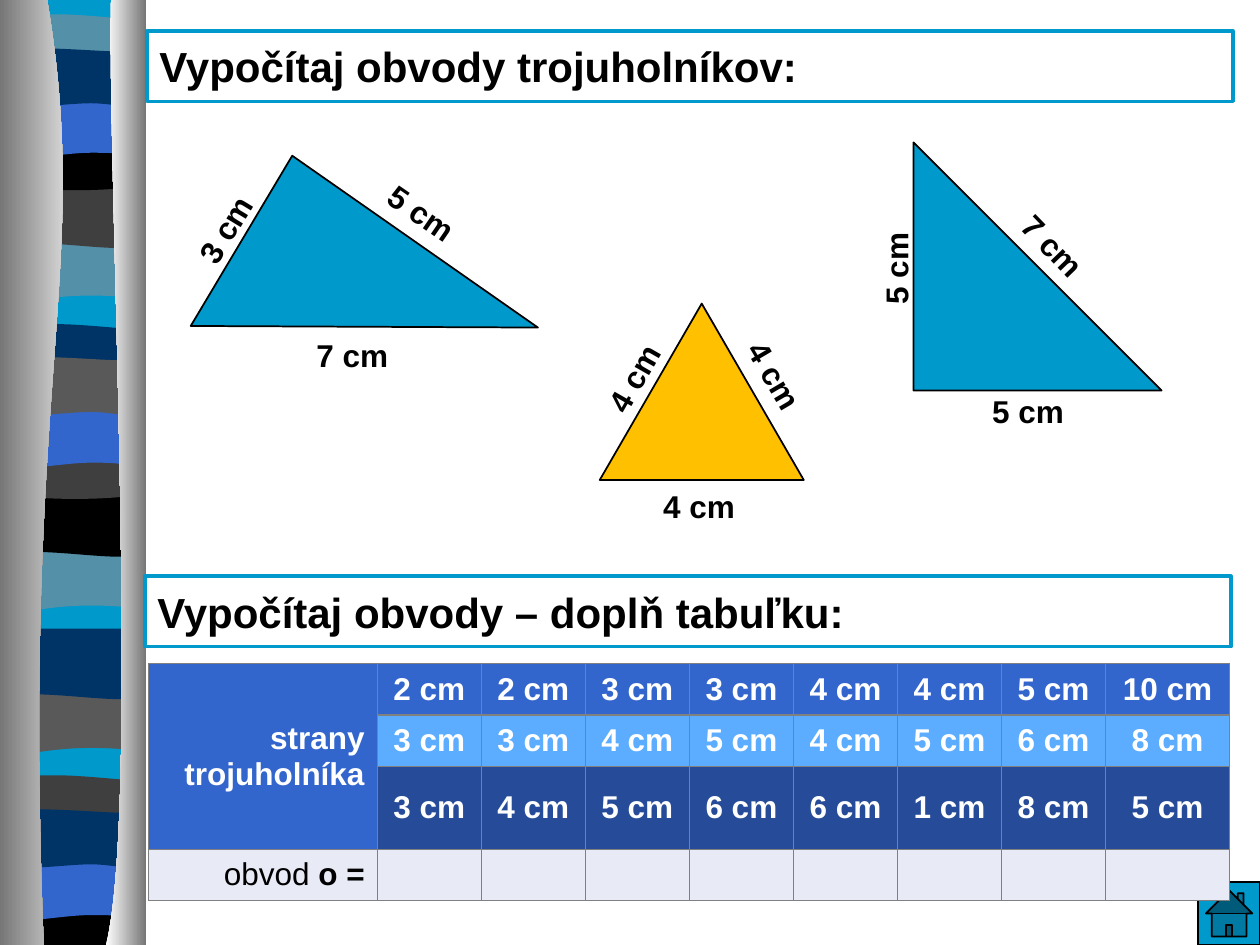
import dataclasses
import typing

import lxml.etree
import pptx
import pptx.dml.color
import pptx.enum.shapes
import pptx.enum.text
import pptx.oxml.ns
import pptx.slide
import pptx.util

Pt = pptx.util.Pt
qualified = pptx.oxml.ns.qn
ALIGN = pptx.enum.text.PP_ALIGN
ANCHOR = pptx.enum.text.MSO_ANCHOR
AUTO_SIZE = pptx.enum.text.MSO_AUTO_SIZE
SHAPE = pptx.enum.shapes.MSO_SHAPE
Step = tuple[float, ...]

BLUE, BLACK, WHITE = "0099CC", "000000", "FFFFFF"
STEEL, CHARCOAL, GREY, NAVY, ROYAL = "5490A8", "3F3F3F", "595959", "003366", "3366CC"


@dataclasses.dataclass
class Stripe:
    outline: str
    top: float
    fill: str


@dataclasses.dataclass
class Panel:
    outline: list[Step]
    start: str
    end: str


@dataclasses.dataclass
class Figure:
    kind: typing.Any
    box: Step
    fill: str


@dataclasses.dataclass
class Label:
    text: str
    left: float
    top: float
    width: float = 85
    rotation: float = 0


OUTLINES = {
    "swell": [(78, 0), (78, 37.5), (24, 31.5, 13.5, 43, 0, 37.5), (0, 0)],
    "bulge": [(78, 0), (78, 38.5), (65, 44, 24, 34.5, 0, 38.5), (0, 0)],
    "ribbon": [(78, 0), (78, 21), (65, 24, 13.5, 24, 0, 21), (0, -0.5),
               (5, -4, 17, -3.3, 30, -3.3), (43, -3.3, 68, -0.5, 78, 0)],
    "bowl": [(78, 0), (78, 27.5), (65, 32, 13.5, 32, 0, 27.5), (0, 0),
             (47.5, 3.5, 61, 0, 78, 0)],
    "arch": [(78, 0), (78, 38), (66, 34, 61, 34, 48, 34), (35, 34, 12, 38, 0, 38), (0, 0)],
    "wave": [(78, 0), (78, 30), (73, 33.5, 61, 29.5, 48, 29.5),
             (35, 29.5, 8.5, 33.5, 0, 30), (0, -0.5), (11.5, -4, 53, 0, 66, 0)],
    "strip": [(78, 0), (78, 538), (0, 538), (0, 0)],
}
STRIPES = [
    Stripe("strip", 0, BLUE),
    Stripe("swell", 133.2, STEEL), Stripe("bulge", 101.5, CHARCOAL),
    Stripe("ribbon", 11.5, STEEL), Stripe("bowl", 77.8, BLACK),
    Stripe("arch", 53.3, ROYAL), Stripe("wave", 29.5, NAVY),
    Stripe("swell", 310.3, STEEL), Stripe("bulge", 277.9, BLACK),
    Stripe("ribbon", 188.6, NAVY), Stripe("bowl", 254.2, CHARCOAL),
    Stripe("arch", 230.4, ROYAL), Stripe("wave", 205.9, GREY),
    Stripe("swell", 391.7, GREY), Stripe("bulge", 359.3, NAVY),
    Stripe("ribbon", 446.4, CHARCOAL), Stripe("bowl", 512.6, BLACK),
    Stripe("arch", 488.9, ROYAL), Stripe("wave", 464.4, NAVY),
]
PANELS = [
    Panel([(27, 0), (53, 155.5, 12, 213, 25, 540), (0, 540), (0, 0)], "767676", WHITE),
    Panel([(63.5, 0), (61, 90, 80.5, 465, 60.5, 540), (83.5, 540), (83.5, 0)], WHITE, "767676"),
]
SCALENE = [(167, 89), (109, 186.3), (307.4, 187.2)]
FIGURES = [
    Figure(SHAPE.RIGHT_TRIANGLE, (522, 81.4, 141.8, 141.8), BLUE),
    Figure(SHAPE.ISOSCELES_TRIANGLE, (342.7, 173.5, 116.6, 100.8), "FFC000"),
]
LABELS = [
    Label("7 cm", 158.8, 188.6), Label("5 cm", 188, 107.3, 105.8, 34.6),
    Label("3 cm", 86, 116.6, rotation=301.3), Label("5 cm", 545, 220.3),
    Label("5 cm", 469.4, 139, rotation=270), Label("7 cm", 557.3, 126, 88.6, 46.1),
    Label("4 cm", 357, 274.6), Label("4 cm", 319.4, 201.6, rotation=299.8),
    Label("4 cm", 400.3, 200.2, rotation=59.5),
]
SIDES = [(2, 2, 3, 3, 4, 4, 5, 10), (3, 3, 4, 5, 4, 5, 6, 8), (3, 4, 5, 6, 6, 1, 8, 5)]
ROW_FILLS = [ROYAL, "5CADFF", "264C99", "E8EAF6"]
COLUMN_WIDTHS = [130.6] + [59.45] * 7 + [71]


def colour(value: str) -> pptx.dml.color.RGBColor:
    return pptx.dml.color.RGBColor.from_string(value)


def apply_format(target: typing.Any, values: dict[str, typing.Any]) -> None:
    for name, value in values.items():
        setattr(target, name, value)


def place(shape: typing.Any, box: Step) -> None:
    apply_format(shape, dict(zip(("left", "top", "width", "height"), map(Pt, box))))


def paint(shape: typing.Any, fill: str, line: str | None = None, width: float = 1) -> None:
    shape.shadow.inherit = False
    shape.fill.solid()
    shape.fill.fore_color.rgb = colour(fill)
    if line is None:
        shape.line.fill.background()
    else:
        shape.line.color.rgb = colour(line)
        shape.line.width = Pt(width)


def write(paragraph: typing.Any, text: str, size: float = 18, fill: str = BLACK,
          bold: bool = True, alignment: typing.Any = ALIGN.CENTER) -> None:
    paragraph.alignment = alignment
    run = paragraph.add_run()
    run.text = text
    apply_format(run.font, {"name": "Arial", "size": Pt(size), "bold": bold})
    run.font.color.rgb = colour(fill)


def bend(shape: typing.Any, steps: list[Step]) -> None:
    segments = iter(list(shape.element.iter(qualified("a:lnTo"))))
    for step in steps:
        curve = next(segments)
        if len(step) == 6:
            curve.tag = qualified("a:cubicBezTo")
            for segment in (next(segments), next(segments)):
                curve.append(segment[0])
                segment.getparent().remove(segment)


def draw_outline(shapes: typing.Any, outline: list[Step], fill: str,
                 line: str | None = None, left: float = 0, top: float = 0) -> typing.Any:
    points = [(Pt(left + step[index]), Pt(top + step[index + 1]))
              for step in outline for index in range(0, len(step), 2)]
    builder = shapes.build_freeform(*points[0])
    builder.add_line_segments(points[1:], close=True)
    shape = builder.convert_to_shape()
    bend(shape, outline[1:])
    paint(shape, fill, line)
    return shape


def draw_panel(shapes: typing.Any, panel: Panel) -> None:
    shape = draw_outline(shapes, panel.outline, panel.start)
    shape.fill.gradient()
    shape.fill.gradient_angle = 0
    for stop, value in zip(shape.fill.gradient_stops, (panel.start, panel.end)):
        stop.color.rgb = colour(value)


def draw_border(slide: pptx.slide.Slide, master: pptx.slide.SlideMaster) -> None:
    group = slide.shapes.add_group_shape()
    for stripe in STRIPES:
        draw_outline(group.shapes, OUTLINES[stripe.outline], stripe.fill, left=3.8, top=stripe.top)
    for panel in PANELS:
        draw_panel(group.shapes, panel)
    master.shapes[0].element.addprevious(group.element)


def draw_figure(slide: pptx.slide.Slide, figure: Figure) -> None:
    shape = slide.shapes.add_shape(figure.kind, *map(Pt, figure.box))
    paint(shape, figure.fill, BLACK)


def draw_heading(shape: typing.Any, text: str, left: float, top: float) -> None:
    place(shape, (left, top, 620.6, 40.3))
    paint(shape, WHITE, BLUE, 2)
    apply_format(shape.text_frame, {"word_wrap": True, "auto_size": AUTO_SIZE.NONE,
                                    "vertical_anchor": ANCHOR.MIDDLE})
    write(shape.text_frame.paragraphs[0], text, size=24, alignment=ALIGN.LEFT)


def draw_label(slide: pptx.slide.Slide, label: Label) -> None:
    box = slide.shapes.add_textbox(*map(Pt, (label.left, label.top, label.width, 28.8)))
    box.rotation = label.rotation
    apply_format(box.text_frame, {"word_wrap": True, "auto_size": AUTO_SIZE.SHAPE_TO_FIT_TEXT})
    write(box.text_frame.paragraphs[0], label.text)


def format_cell(cell: typing.Any, fill: str) -> None:
    cell.vertical_anchor = ANCHOR.MIDDLE
    properties = cell._tc.get_or_add_tcPr()
    for side in ("a:lnL", "a:lnR", "a:lnT", "a:lnB"):
        line = lxml.etree.SubElement(properties, qualified(side), w=str(Pt(0.75)))
        solid = lxml.etree.SubElement(line, qualified("a:solidFill"))
        lxml.etree.SubElement(solid, qualified("a:srgbClr"), val="808080")
    cell.fill.solid()
    cell.fill.fore_color.rgb = colour(fill)


def draw_table(slide: pptx.slide.Slide) -> None:
    table = slide.shapes.add_table(4, 9, Pt(85), Pt(379.4), Pt(sum(COLUMN_WIDTHS)), Pt(116.8)).table
    for column, width in zip(table.columns, COLUMN_WIDTHS):
        column.width = Pt(width)
    for row, fill in zip(table.rows, ROW_FILLS):
        row.height = Pt(29.2)
        for cell in row.cells:
            format_cell(cell, fill)
    for row_index, lengths in enumerate(SIDES):
        for column_index, length in enumerate(lengths, 1):
            frame = table.cell(row_index, column_index).text_frame
            write(frame.paragraphs[0], f"{length} cm", fill=WHITE)
    header = table.cell(0, 0)
    header.merge(table.cell(2, 0))
    write(header.text_frame.paragraphs[0], "strany", fill=WHITE, alignment=ALIGN.RIGHT)
    write(header.text_frame.add_paragraph(), "trojuholníka", fill=WHITE, alignment=ALIGN.RIGHT)
    total = table.cell(3, 0).text_frame.paragraphs[0]
    write(total, "obvod ", bold=False, alignment=ALIGN.RIGHT)
    write(total, "o =", alignment=ALIGN.RIGHT)


def main() -> None:
    presentation = pptx.Presentation()
    apply_format(presentation, {"slide_width": Pt(720), "slide_height": Pt(540)})
    slide = presentation.slides.add_slide(presentation.slide_layouts[5])
    draw_border(slide, presentation.slide_master)
    draw_heading(slide.shapes.title, "Vypočítaj obvody trojuholníkov:", 83.9, 17.6)
    draw_figure(slide, Figure(SHAPE.ACTION_BUTTON_HOME, (684.7, 504, 35.3, 36), BLUE))
    task = slide.shapes.add_shape(SHAPE.RECTANGLE, 0, 0, 0, 0)
    draw_heading(task, "Vypočítaj obvody – doplň tabuľku:", 82.8, 329.3)
    draw_table(slide)
    draw_outline(slide.shapes, SCALENE, BLUE, BLACK)
    for figure in FIGURES:
        draw_figure(slide, figure)
    for label in LABELS:
        draw_label(slide, label)
    presentation.save("out.pptx")


if __name__ == "__main__":
    main()
